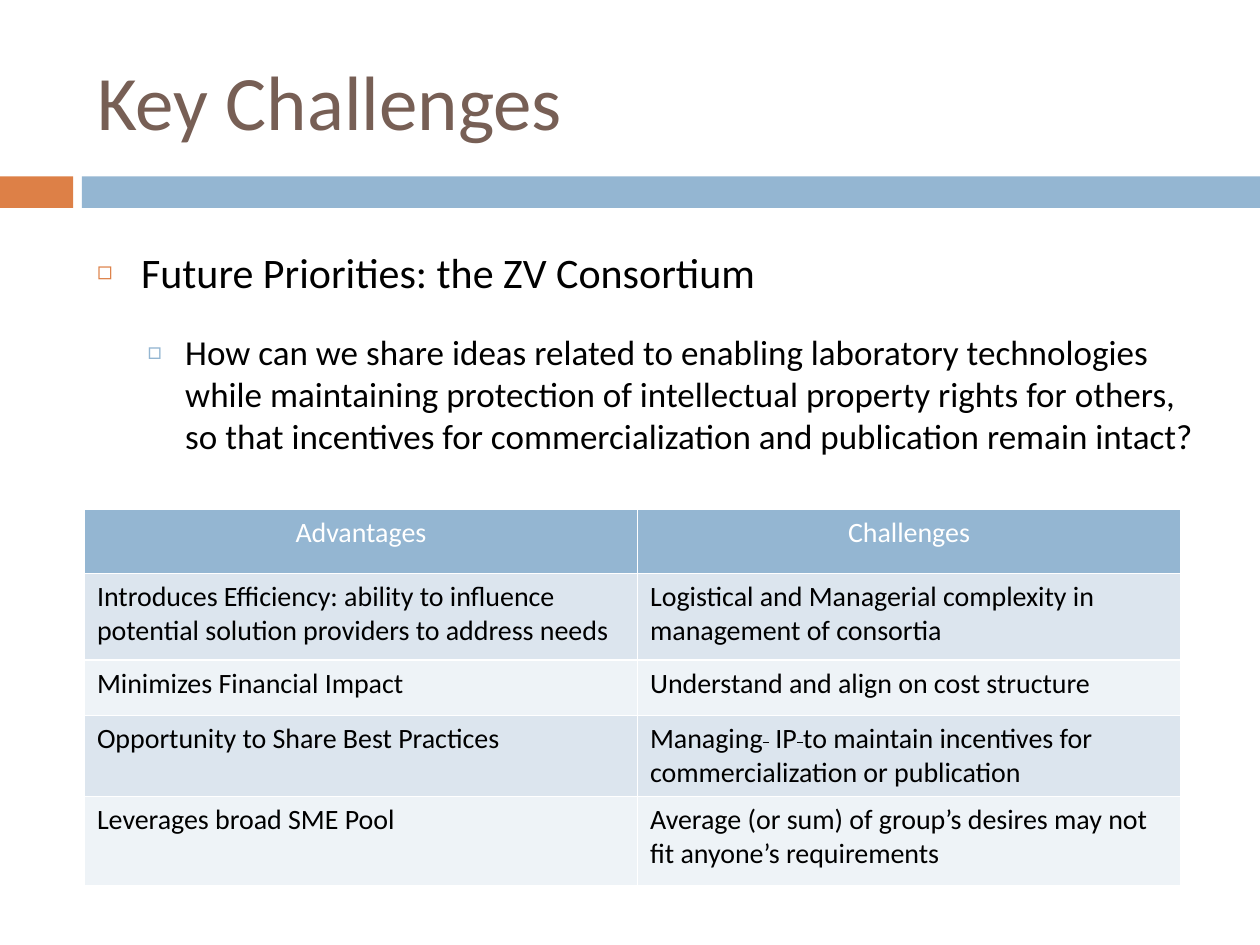
import pptx
import pptx.util
import pptx.dml.color
import pptx.enum.shapes
import pptx.enum.text
import pptx.oxml
import pptx.oxml.ns
import lxml.etree

Inches, Pt = pptx.util.Inches, pptx.util.Pt
RGBColor = pptx.dml.color.RGBColor
Align = pptx.enum.text.PP_ALIGN
Anchor = pptx.enum.text.MSO_ANCHOR

ORANGE = RGBColor(0xDD, 0x80, 0x47)
BLUE = RGBColor(0x94, 0xB6, 0xD2)
BROWN = RGBColor(0x77, 0x5F, 0x55)
BLACK = RGBColor(0, 0, 0)
WHITE = RGBColor(0xFF, 0xFF, 0xFF)
BANDS = [RGBColor(0xDC, 0xE5, 0xEE), RGBColor(0xEE, 0xF3, 0xF7)]

TITLE = "Key Challenges"
BARS = [(0, 0.58, ORANGE), (0.65, 9.35, BLUE)]
BULLETS = [
    dict(text="Future Priorities: the ZV Consortium", level=0, size=24,
         left=0.35, hang=0.35, mark="◻", color=ORANGE, percent=60),
    dict(text="How can we share ideas related to enabling laboratory technologies "
              "while maintaining protection of intellectual property rights for others, "
              "so that incentives for commercialization and publication remain intact?",
         level=1, size=20, left=0.7, hang=0.3, mark="□", color=BLUE, percent=70),
]
STRUCK = " "
ROWS = [
    (["Advantages"], ["Challenges"]),
    (["Introduces Efficiency: ability to influence potential solution providers to address needs"],
     ["Logistical and Managerial complexity in management of consortia"]),
    (["Minimizes Financial Impact"], ["Understand and align on cost structure"]),
    (["Opportunity to Share Best Practices"],
     ["Managing", STRUCK, " IP", STRUCK,
      "to maintain incentives for commercialization or publication"]),
    (["Leverages broad SME Pool"],
     ["Average (or sum) of group’s desires may not fit anyone’s requirements"]),
]
COLUMN_WIDTHS = [4.39, 4.31]
ROW_HEIGHTS = [0.51, 0.69, 0.44, 0.64, 0.71]


def place(shape, left, top, width, height):
    frame = dict(left=left, top=top, width=width, height=height)
    for name, value in frame.items():
        setattr(shape, name, Inches(value))


def add_span(para, text, size, color):
    span = para.add_run()
    span.text = text
    for name, value in dict(name="Calibri", size=Pt(size), bold=False).items():
        setattr(span.font, name, value)
    span.font.color.rgb = color
    return span


def add_bullet(para, item):
    para.level = item["level"]
    para.space_before, para.space_after = Pt(13), Pt(6)
    properties = para._p.get_or_add_pPr()
    properties.set("marL", str(Inches(item["left"])))
    properties.set("indent", str(-Inches(item["hang"])))
    color = lxml.etree.SubElement(properties, pptx.oxml.ns.qn("a:buClr"))
    lxml.etree.SubElement(color, pptx.oxml.ns.qn("a:srgbClr"), val=str(item["color"]))
    for tag, values in [("a:buSzPct", dict(val=str(item["percent"] * 1000))),
                        ("a:buFont", dict(typeface="Calibri")),
                        ("a:buChar", dict(char=item["mark"]))]:
        lxml.etree.SubElement(properties, pptx.oxml.ns.qn(tag), **values)
    add_span(para, item["text"], item["size"], BLACK)


def add_borders(cell):
    properties = cell._tc.get_or_add_tcPr()
    for index, side in enumerate("LRTB"):
        line = pptx.oxml.parse_xml(
            f'<a:ln{side} {pptx.oxml.ns.nsdecls("a")} w="{Pt(1)}">'
            f'<a:solidFill><a:srgbClr val="{WHITE}"/></a:solidFill></a:ln{side}>')
        properties.insert(index, line)


def add_grid(page):
    grid = page.shapes.add_table(
        len(ROWS), len(COLUMN_WIDTHS), Inches(0.67), Inches(4.04),
        Inches(sum(COLUMN_WIDTHS)), Inches(sum(ROW_HEIGHTS))).table
    for column, width in zip(grid.columns, COLUMN_WIDTHS):
        column.width = Inches(width)
    for row_index, (row, height) in enumerate(zip(grid.rows, ROW_HEIGHTS)):
        row.height = Inches(height)
        header = row_index == 0
        for cell, pieces in zip(row.cells, ROWS[row_index]):
            cell.fill.solid()
            cell.fill.fore_color.rgb = BLUE if header else BANDS[(row_index - 1) % 2]
            add_borders(cell)
            para = cell.text_frame.paragraphs[0]
            para.alignment = Align.CENTER if header else Align.LEFT
            for piece in pieces:
                span = add_span(para, piece, 16, WHITE if header else BLACK)
                if piece == STRUCK:
                    span._r.get_or_add_rPr().set("strike", "sngStrike")


def main():
    deck = pptx.Presentation()
    deck.slide_width, deck.slide_height = Inches(10), Inches(7.5)
    page = deck.slides.add_slide(deck.slide_layouts[1])
    title, body = page.placeholders

    for left, width, color in BARS:
        bar = page.shapes.add_shape(
            pptx.enum.shapes.MSO_SHAPE.RECTANGLE,
            Inches(left), Inches(1.4), Inches(width), Inches(0.25))
        bar.shadow.inherit = False
        bar.fill.solid()
        bar.fill.fore_color.rgb = color
        bar.line.fill.background()

    place(title, 0.67, 0.25, 8.92, 1.08)
    place(body, 0.67, 1.91, 8.92, 2.58)
    for box, anchor in [(title, Anchor.MIDDLE), (body, Anchor.TOP)]:
        frame = dict(word_wrap=True, vertical_anchor=anchor,
                     auto_size=pptx.enum.text.MSO_AUTO_SIZE.NONE)
        for name, value in frame.items():
            setattr(box.text_frame, name, value)

    heading = title.text_frame.paragraphs[0]
    heading.alignment = Align.LEFT
    add_span(heading, TITLE, 44, BROWN)
    for index, item in enumerate(BULLETS):
        text = body.text_frame
        add_bullet(text.add_paragraph() if index else text.paragraphs[0], item)
    add_grid(page)
    deck.save("out.pptx")


if __name__ == "__main__":
    main()
